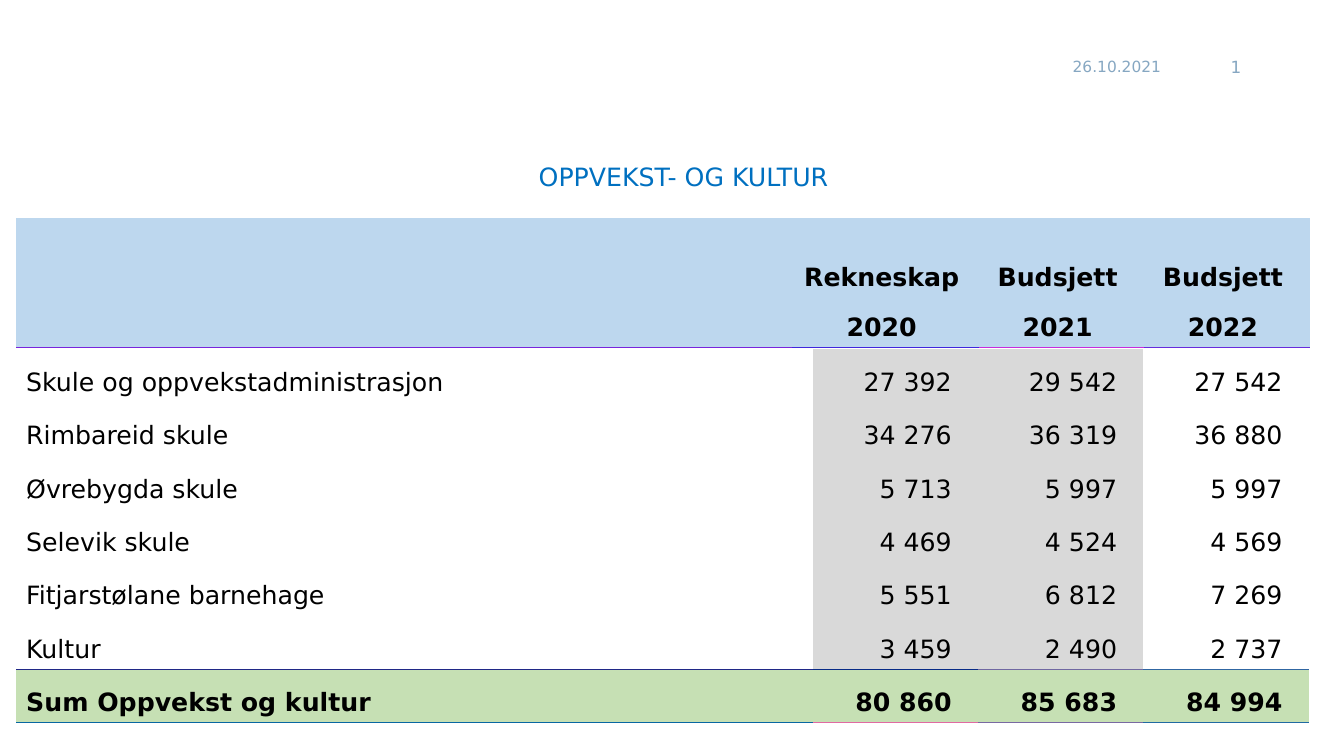
from lxml.etree import SubElement
from pptx import Presentation
from pptx.dml.color import RGBColor
from pptx.enum.text import MSO_ANCHOR as Anchor, PP_ALIGN as Align
from pptx.oxml.ns import qn
from pptx.util import Inches, Pt

FONT = "DejaVu Sans"
NO_GRID_STYLE = "{2D5ABB26-0587-4C30-8999-92F81FD0307C}"
COLORS = {
    "muted": "86A7C2", "title": "0070C0", "text": "000000",
    "header": "BDD7EE", "past": "D9D9D9", "sum": "C6E0B4",
}

# text, (left, top, width, height), size, color, alignment, anchor
LABELS = [
    ("26.10.2021", (10.54, 0.46, 1.15, 0.4), 11, "muted", Align.LEFT, Anchor.MIDDLE),
    ("1", (11.84, 0.46, 0.57, 0.4), 12, "muted", Align.RIGHT, Anchor.MIDDLE),
    ("OPPVEKST- OG KULTUR", (2.38, 1.55, 8.8, 0.4), 18, "title", Align.CENTER, Anchor.TOP),
]
HEADER = [
    ("", "Rekneskap", "Budsjett", "Budsjett"),
    ("", "2020", "2021", "2022"),
]
BUDGET = [
    ("Skule og oppvekstadministrasjon", "27 392", "29 542", "27 542"),
    ("Rimbareid skule", "34 276", "36 319", "36 880"),
    ("Øvrebygda skule", "5 713", "5 997", "5 997"),
    ("Selevik skule", "4 469", "4 524", "4 569"),
    ("Fitjarstølane barnehage", "5 551", "6 812", "7 269"),
    ("Kultur", "3 459", "2 490", "2 737"),
    ("Sum Oppvekst og kultur", "80 860", "85 683", "84 994"),
]
HEADER_RULE = ("7824DC", "4026DC", "C82BDC", "682BDC")
SUM_TOP_RULE = ("202887", "082B87", "7068A2", "3066A2")
SUM_BOTTOM_RULE = ("0867A2", "E06AA2", "7869A2", "206AA2")

TABLE_LEFT = 0.16
HEADER_TOP, BUDGET_TOP = 2.16, 3.46
HEADER_WIDTHS = (7.7, 1.85, 1.64, 1.64)
BUDGET_WIDTHS = (7.9, 1.64, 1.64, 1.64)
HEADER_HEIGHTS = (0.79, 0.5)
BUDGET_HEIGHTS = (0.53,) * len(BUDGET)
LABEL_MARGIN, HEADER_MARGIN, NUMBER_MARGIN = 0.1, 0.18, 0.26


def write(frame, text, size, color, align, bold=False):
    para = frame.paragraphs[0]
    para.text = text
    para.alignment = align
    para.font.name = FONT
    para.font.size = Pt(size)
    para.font.bold = bold
    para.font.color.rgb = RGBColor.from_string(COLORS[color])


def add_label(page, text, place, size, color, align, anchor):
    frame = page.shapes.add_textbox(*map(Inches, place)).text_frame
    frame.word_wrap = True
    frame.vertical_anchor = anchor
    write(frame, text, size, color, align)


def add_plain_table(page, top, widths, heights):
    """Add a table without banding or grid lines."""
    shape = page.shapes.add_table(
        len(heights), len(widths), Inches(TABLE_LEFT), Inches(top),
        Inches(sum(widths)), Inches(sum(heights)))
    next(shape.element.iter(qn("a:tableStyleId"))).text = NO_GRID_STYLE
    table = shape.table
    table.first_row = table.horz_banding = False
    for column, width in zip(table.columns, widths):
        column.width = Inches(width)
    for row, height in zip(table.rows, heights):
        row.height = Inches(height)
    return table


def add_border(cell, side, color):
    """Draw a thin border; must come before the cell's fill is set."""
    properties = cell._tc.get_or_add_tcPr()
    line = SubElement(properties, qn(f"a:ln{side}"), w=str(Pt(0.75)))
    SubElement(SubElement(line, qn("a:solidFill")), qn("a:srgbClr"), val=color)


def style_cell(cell, text, align, margin, fill, bold):
    cell.vertical_anchor = Anchor.BOTTOM
    cell.margin_right = Inches(margin)
    if fill:
        cell.fill.solid()
        cell.fill.fore_color.rgb = RGBColor.from_string(COLORS[fill])
    else:
        cell.fill.background()
    write(cell.text_frame, text, 18, "text", align, bold)


def add_header(page):
    table = add_plain_table(page, HEADER_TOP, HEADER_WIDTHS, HEADER_HEIGHTS)
    for column, color in enumerate(HEADER_RULE):
        add_border(table.cell(1, column), "B", color)
    for r, row in enumerate(HEADER):
        for c, text in enumerate(row):
            style_cell(table.cell(r, c), text, Align.CENTER, HEADER_MARGIN, "header", True)


def add_budget(page):
    table = add_plain_table(page, BUDGET_TOP, BUDGET_WIDTHS, BUDGET_HEIGHTS)
    last = len(BUDGET) - 1
    for column, (top, bottom) in enumerate(zip(SUM_TOP_RULE, SUM_BOTTOM_RULE)):
        add_border(table.cell(last - 1, column), "B", top)
        add_border(table.cell(last, column), "T", top)
        add_border(table.cell(last, column), "B", bottom)
    for r, row in enumerate(BUDGET):
        for c, text in enumerate(row):
            fill = "sum" if r == last else "past" if c in (1, 2) else None
            align, margin = (Align.RIGHT, NUMBER_MARGIN) if c else (Align.LEFT, LABEL_MARGIN)
            style_cell(table.cell(r, c), text, align, margin, fill, r == last)


def main():
    deck = Presentation()
    deck.slide_width, deck.slide_height = Inches(13.33), Inches(7.5)
    page = deck.slides.add_slide(deck.slide_layouts[6])
    for label in LABELS:
        add_label(page, *label)
    add_header(page)
    add_budget(page)
    deck.save("out.pptx")


if __name__ == "__main__":
    main()
